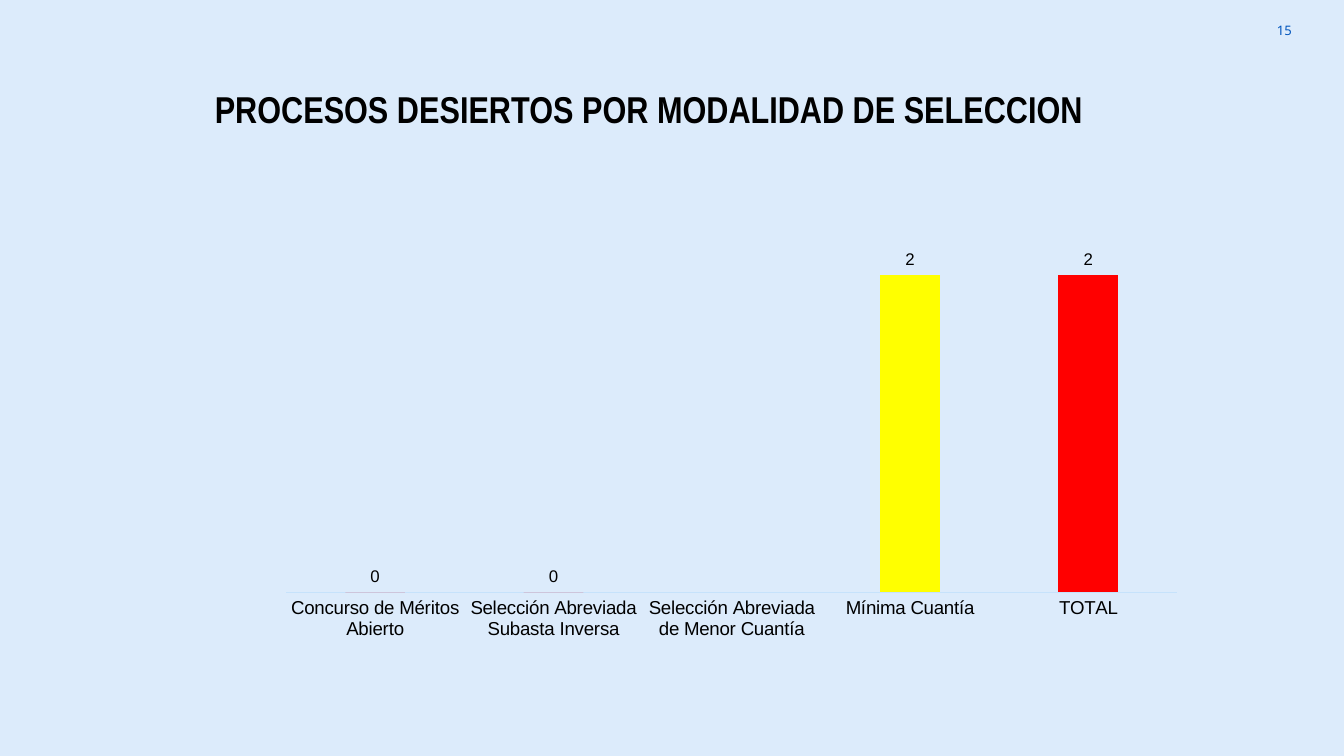
from dataclasses import dataclass

from lxml import etree
from pptx import Presentation
from pptx.chart.data import CategoryChartData
from pptx.dml.color import RGBColor
from pptx.enum.chart import XL_CHART_TYPE, XL_LABEL_POSITION, XL_TICK_LABEL_POSITION, XL_TICK_MARK
from pptx.enum.text import MSO_ANCHOR, PP_ALIGN
from pptx.oxml.ns import qn
from pptx.util import Inches, Pt

COLUMNS = XL_CHART_TYPE.COLUMN_CLUSTERED
OUTSIDE = XL_LABEL_POSITION.OUTSIDE_END
BESIDE = XL_TICK_LABEL_POSITION.NEXT_TO_AXIS
NO_TICK = XL_TICK_MARK.NONE
MIDDLE = MSO_ANCHOR.MIDDLE
CENTER, RIGHT = PP_ALIGN.CENTER, PP_ALIGN.RIGHT

TITLE = "PROCESOS DESIERTOS POR MODALIDAD DE SELECCION"
PAGE = "15"
COUNTS = [
    ("Concurso de Méritos Abierto", 0),
    ("Selección Abreviada Subasta Inversa", 0),
    ("Selección Abreviada de Menor Cuantía", None),
    ("Mínima Cuantía", 2),
    ("TOTAL", 2),
]
MARKED = "Mínima Cuantía"


@dataclass(frozen=True)
class Theme:
    back: str = "DCEBFB"
    ink: str = "000000"
    page: str = "0054BC"
    axis: str = "C6E2FB"
    bar: str = "FF0000"
    mark: str = "FFFF00"
    sans: str = "Arial"
    narrow: str = "Arial Narrow"
    small: str = "Noto Sans"
    title_size: int = 20
    axis_size: int = 10
    label_size: int = 9
    page_size: int = 7


THEME = Theme()
WIDTH = Inches(10)
HEIGHT = WIDTH * 9 // 16

# Left, top, width and height as shares of the slide
TITLE_BOX = (0.147, 0.105, 0.672, 0.078)
PAGE_BOX = (0.911, 0.002, 0.06, 0.077)
CHART_BOX = (0.199, 0.247, 0.691, 0.61)
# Bars' area as shares of the chart
PLOT_BOX = {"x": 0.02, "y": 0.02, "w": 0.96, "h": 0.86}


def place(box):
    return [int(share * side) for share, side in zip(box, (WIDTH, HEIGHT) * 2)]


def paint(fill, color):
    fill.solid()
    fill.fore_color.rgb = RGBColor.from_string(color)


def style(font, name, size, color, bold=False):
    font.name, font.size, font.bold = name, Pt(size), bold
    font.color.rgb = RGBColor.from_string(color)


def write(shape, text, align, wrap, inset, *look):
    frame = shape.text_frame
    frame.word_wrap = wrap
    frame.vertical_anchor = MIDDLE
    frame.margin_left = frame.margin_right = Inches(0.1)
    frame.margin_top = frame.margin_bottom = Inches(inset)
    para = frame.paragraphs[0]
    para.alignment = align
    run = para.add_run()
    run.text = text
    style(run.font, *look)


def fix_plot(chart):
    """Pin the inner plot area to PLOT_BOX."""
    area = chart.plots[0]._element.getparent()
    for old in area.findall(qn("c:layout")):
        area.remove(old)
    layout = etree.Element(qn("c:layout"))
    manual = etree.SubElement(layout, qn("c:manualLayout"))
    parts = {"layoutTarget": "inner", "xMode": "edge", "yMode": "edge", **PLOT_BOX}
    for tag, val in parts.items():
        etree.SubElement(manual, qn(f"c:{tag}")).set("val", str(val))
    area.insert(0, layout)


def add_counts(slide):
    data = CategoryChartData(number_format="0")
    names, values = zip(*COUNTS)
    data.categories = names
    data.add_series("Series 1", values)
    chart = slide.shapes.add_chart(COLUMNS, *place(CHART_BOX), data).chart
    chart.has_title = chart.has_legend = False
    style(chart.font, THEME.sans, THEME.axis_size, THEME.ink)

    axis = chart.category_axis
    axis.major_tick_mark = axis.minor_tick_mark = NO_TICK
    axis.tick_label_position = BESIDE
    style(axis.tick_labels.font, THEME.sans, THEME.axis_size, THEME.ink)
    paint(axis.format.line.fill, THEME.axis)
    axis.format.line.width = Pt(0.75)

    scale = chart.value_axis
    scale.minimum_scale, scale.maximum_scale = 0, 2.5
    scale.has_major_gridlines = False
    scale.visible = False

    plot = chart.plots[0]
    plot.gap_width = 199
    plot.vary_by_categories = False
    bars = plot.series[0]
    paint(bars.format.fill, THEME.bar)
    paint(bars.points[names.index(MARKED)].format.fill, THEME.mark)

    labels = bars.data_labels
    labels.show_value = True
    labels.position = OUTSIDE
    labels.number_format, labels.number_format_is_linked = "0", False
    style(labels.font, THEME.sans, THEME.label_size, THEME.ink)
    fix_plot(chart)


def main():
    deck = Presentation()
    deck.slide_width, deck.slide_height = WIDTH, HEIGHT
    slide = deck.slides.add_slide(deck.slide_layouts.get_by_name("Title Only"))
    paint(slide.background.fill, THEME.back)

    page = slide.shapes.add_textbox(*place(PAGE_BOX))
    write(page, PAGE, RIGHT, True, 0.1, THEME.small, THEME.page_size, THEME.page)

    title = slide.shapes.title
    title.left, title.top, title.width, title.height = place(TITLE_BOX)
    write(title, TITLE, CENTER, False, 0.05,
          THEME.narrow, THEME.title_size, THEME.ink, True)

    add_counts(slide)
    deck.save("out.pptx")


if __name__ == "__main__":
    main()
